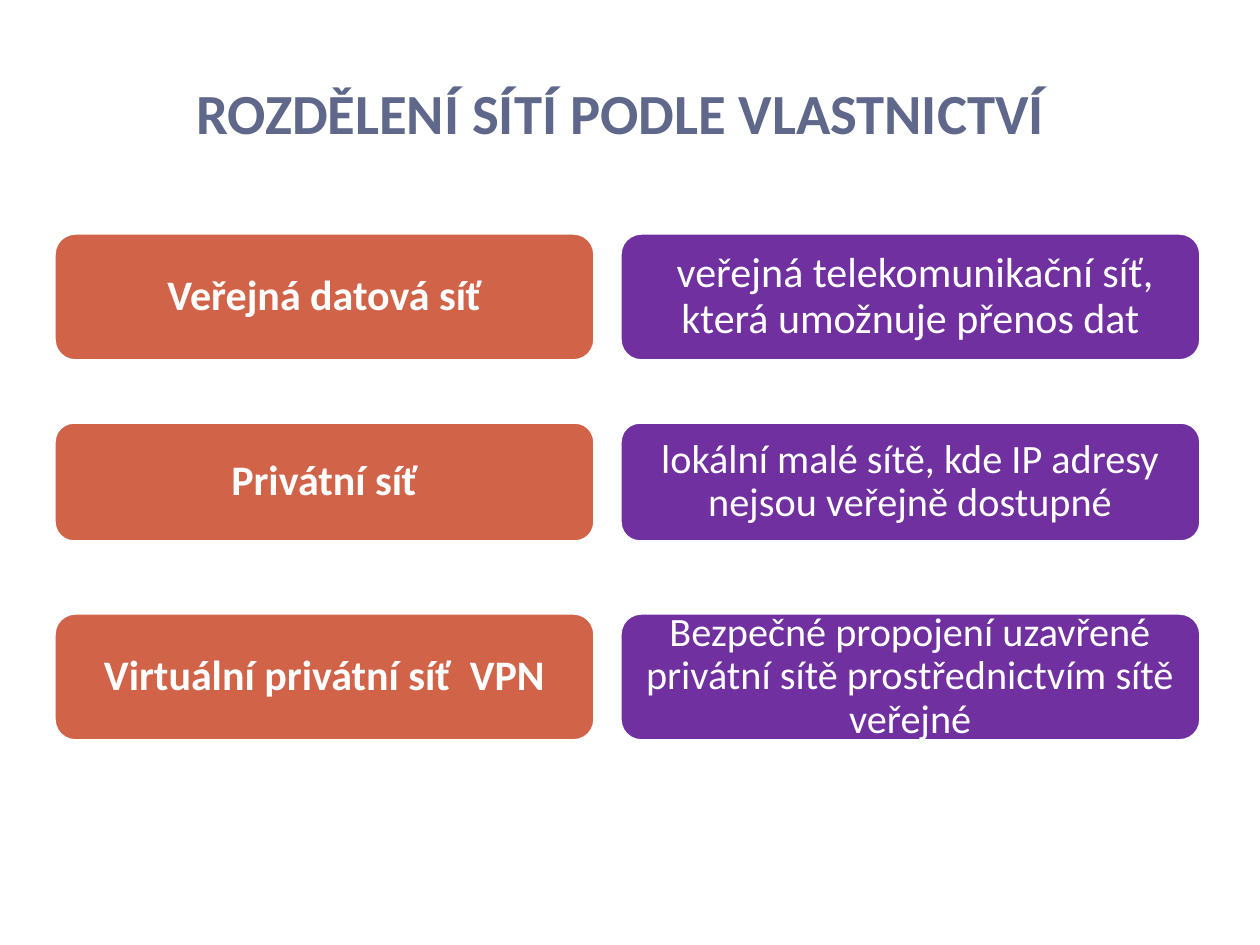
import pptx
import pptx.dml.color
import pptx.enum.shapes
import pptx.enum.text
import pptx.util

EMU_PER_PX = 914400 / 126
FONT = "Calibri"
WHITE, SLATE, ORANGE, PURPLE = "FFFFFF", "5F688B", "D16349", "7030A0"

TITLE_BOX = (30, 66, 1181, 86)
TERM_LEFT, TERM_WIDTH = 54, 541
MEANING_LEFT, MEANING_WIDTH = 620, 581

# top, height, term, meaning, size of the meaning in points
NETWORKS = [
    (233, 128, "Veřejná datová síť",
     " veřejná telekomunikační síť, která umožnuje přenos dat", 24),
    (422, 120, "Privátní síť",
     "lokální malé sítě, kde IP adresy nejsou veřejně dostupné", 23),
    (613, 128, "Virtuální privátní síť  VPN",
     "Bezpečné propojení uzavřené privátní sítě prostřednictvím sítě veřejné", 23),
]


def px(length):
    return pptx.util.Emu(round(length * EMU_PER_PX))


def rgb(hex_color):
    return pptx.dml.color.RGBColor.from_string(hex_color)


def write(frame, text, size, color, bold):
    frame.text = text
    frame.word_wrap = True
    frame.auto_size = pptx.enum.text.MSO_AUTO_SIZE.NONE
    paragraph = frame.paragraphs[0]
    paragraph.alignment = pptx.enum.text.PP_ALIGN.CENTER
    font = paragraph.runs[0].font
    font.name, font.size, font.bold = FONT, pptx.util.Pt(size), bold
    font.color.rgb = rgb(color)
    return paragraph


def add_title(slide, box, text):
    title = slide.shapes.title
    title.left, title.top, title.width, title.height = map(px, box)
    write(title.text_frame, text, 32.4, SLATE, True)
    title.text_frame.vertical_anchor = pptx.enum.text.MSO_ANCHOR.BOTTOM


def add_card(slide, box, text, size, fill, bold):
    card = slide.shapes.add_shape(
        pptx.enum.shapes.MSO_SHAPE.ROUNDED_RECTANGLE, *map(px, box))
    card.shadow.inherit = False
    card.fill.solid()
    card.fill.fore_color.rgb = rgb(fill)
    card.line.color.rgb = rgb(WHITE)
    card.line.width = pptx.util.Pt(2)
    frame = card.text_frame
    frame.margin_left = frame.margin_right = px(12)
    frame.margin_top = frame.margin_bottom = px(7)
    frame.vertical_anchor = pptx.enum.text.MSO_ANCHOR.MIDDLE
    write(frame, text, size, WHITE, bold).line_spacing = 0.9


def add_network_row(slide, top, height, term, meaning, meaning_size):
    add_card(slide, (TERM_LEFT, top, TERM_WIDTH, height), term, 24, ORANGE, True)
    add_card(slide, (MEANING_LEFT, top, MEANING_WIDTH, height),
             meaning, meaning_size, PURPLE, False)


def main():
    deck = pptx.Presentation()
    deck.slide_width, deck.slide_height = px(1260), px(945)
    slide = deck.slides.add_slide(deck.slide_layouts[5])
    add_title(slide, TITLE_BOX, "ROZDĚLENÍ SÍTÍ PODLE VLASTNICTVÍ")
    for network in NETWORKS:
        add_network_row(slide, *network)
    deck.save("out.pptx")


if __name__ == "__main__":
    main()
